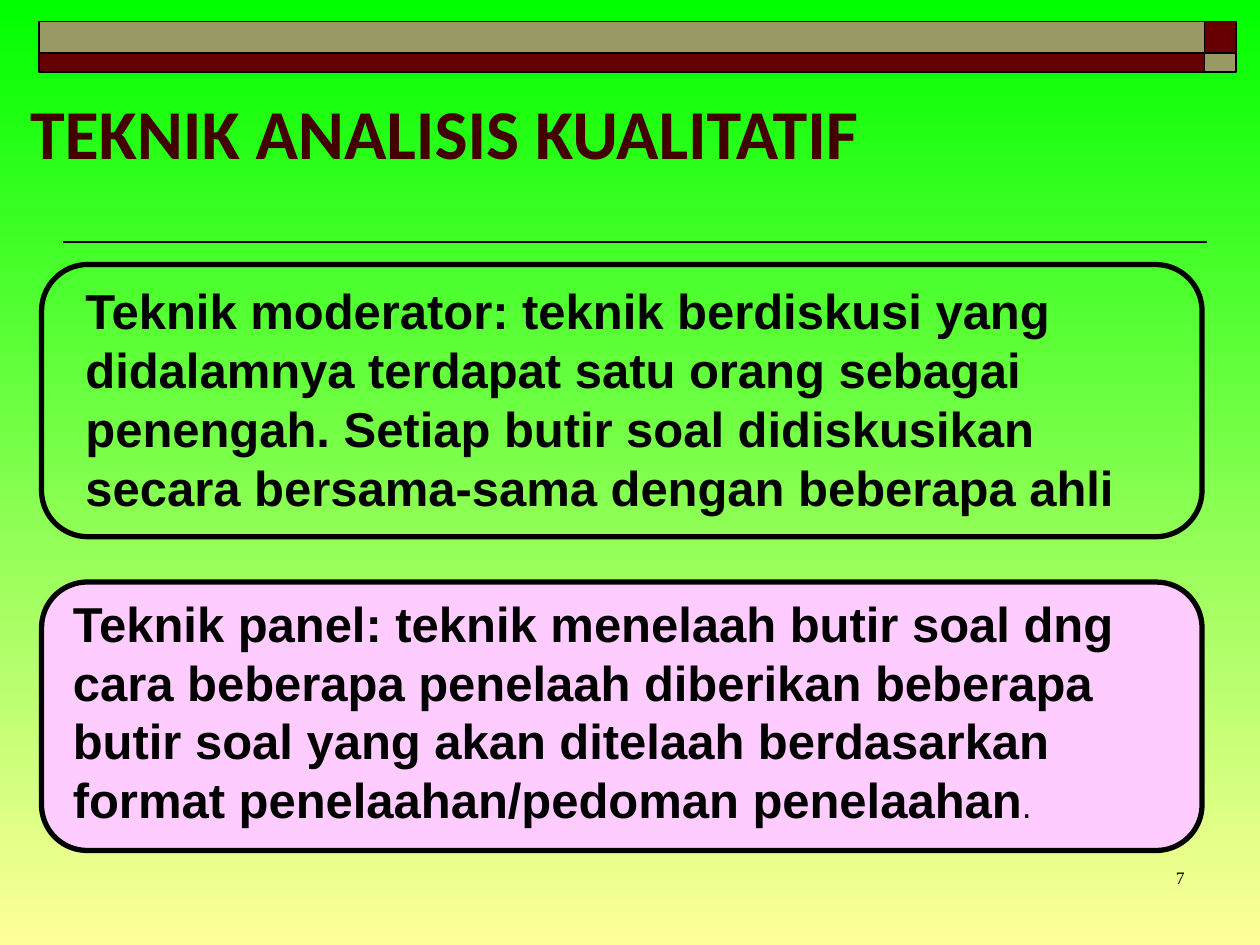
import pptx
import pptx.util
import pptx.dml.color
import pptx.enum.shapes
import pptx.enum.text
import lxml.etree

theme = {
    "sky": "00FF00", "sand": "FFFF99", "maroon": "660000", "olive": "999966",
    "heading": "420000", "ink": "000000", "pink": "FFCCFF",
    "title_size": 40, "body_size": 28, "stop_size": 20, "number_size": 10,
    "title_font": "Calibri", "body_font": "Arial", "number_font": "Times New Roman",
    "thin": 1, "thick": 3,
}

presentation = pptx.Presentation()
presentation.slide_width = pptx.util.Inches(10)
presentation.slide_height = pptx.util.Inches(7.5)
slide = presentation.slides.add_slide(presentation.slide_layouts[6])
column = presentation.slide_width / 100
row = presentation.slide_height / 100
rgb = pptx.dml.color.RGBColor.from_string
align = pptx.enum.text.PP_ALIGN
anchors = pptx.enum.text.MSO_ANCHOR
shapes = pptx.enum.shapes.MSO_SHAPE


def add_box(kind, left, top, width, height, fill, weight):
    shape = slide.shapes.add_shape(
        kind, int(left * column), int(top * row), int(width * column), int(height * row))
    shape.shadow.inherit = False
    if fill:
        shape.fill.solid()
        shape.fill.fore_color.rgb = rgb(theme[fill])
    else:
        shape.fill.background()
    shape.line.color.rgb = rgb(theme["ink"])
    shape.line.width = pptx.util.Pt(weight)
    return shape


def add_text(left, top, width, height, runs, font, color, alignment=align.LEFT,
             anchor=anchors.TOP, spacing=1.0):
    text_box = slide.shapes.add_textbox(
        int(left * column), int(top * row), int(width * column), int(height * row))
    frame = text_box.text_frame
    frame.word_wrap = True
    frame.vertical_anchor = anchor
    paragraph = frame.paragraphs[0]
    paragraph.alignment = alignment
    paragraph.line_spacing = spacing
    for text, size, bold in runs:
        run = paragraph.add_run()
        run.text = text
        run.font.name = theme[font]
        run.font.size = pptx.util.Pt(theme[size])
        run.font.bold = bold
        run.font.color.rgb = rgb(theme[color])


background = slide.background.fill
background.gradient()
background.gradient_angle = 270
for stop, color in zip(background.gradient_stops, ("sky", "sand")):
    stop.color.rgb = rgb(theme[color])

rule = slide.shapes.add_connector(
    pptx.enum.shapes.MSO_CONNECTOR.STRAIGHT,
    int(95.8 * column), int(25.6 * row), int(5 * column), int(25.6 * row))
rule.line.color.rgb = rgb(theme["ink"])
rule.line.width = pptx.util.Pt(theme["thin"])
lxml.etree.SubElement(rule.element.spPr, pptx.oxml.ns.qn("a:effectLst"))

band_columns = [(3.1, 92.5), (95.6, 2.5)]
band_rows = [(2.27, 3.33, ("olive", "maroon")), (5.6, 2, ("maroon", "olive"))]
for top, height, colors in band_rows:
    for (left, width), color in zip(band_columns, colors):
        add_box(shapes.RECTANGLE, left, top, width, height, color, theme["thin"])

add_text(1.4, 6.8, 93.6, 12.27, [("TEKNIK ANALISIS KUALITATIF", "title_size", True)],
         "title_font", "heading", anchor=anchors.BOTTOM, spacing=0.85)

moderator = ("Teknik moderator: teknik berdiskusi yang didalamnya terdapat satu orang "
             "sebagai penengah. Setiap butir soal didiskusikan secara bersama-sama "
             "dengan beberapa ahli")
panel = ("Teknik panel: teknik menelaah butir soal dng cara beberapa penelaah diberikan "
         "beberapa butir soal yang akan ditelaah berdasarkan format "
         "penelaahan/pedoman penelaahan")
cards = [
    (28, 28.8, None, 5.8, 29.07, 89.6, [(moderator, "body_size", True)]),
    (61.6, 28.4, "pink", 4.8, 62.13, 90.5,
     [(panel, "body_size", True), (".", "stop_size", False)]),
]
for top, height, fill, text_left, text_top, text_width, runs in cards:
    card = add_box(shapes.ROUNDED_RECTANGLE, 3.3, top, 92.1, height, fill, theme["thick"])
    card.adjustments[0] = 0.17
    add_text(text_left, text_top, text_width, 26.53, runs, "body_font", "ink")

add_text(74.2, 91.07, 20.8, 6.67, [("7", "number_size", False)],
         "number_font", "ink", alignment=align.RIGHT)

presentation.save("out.pptx")
